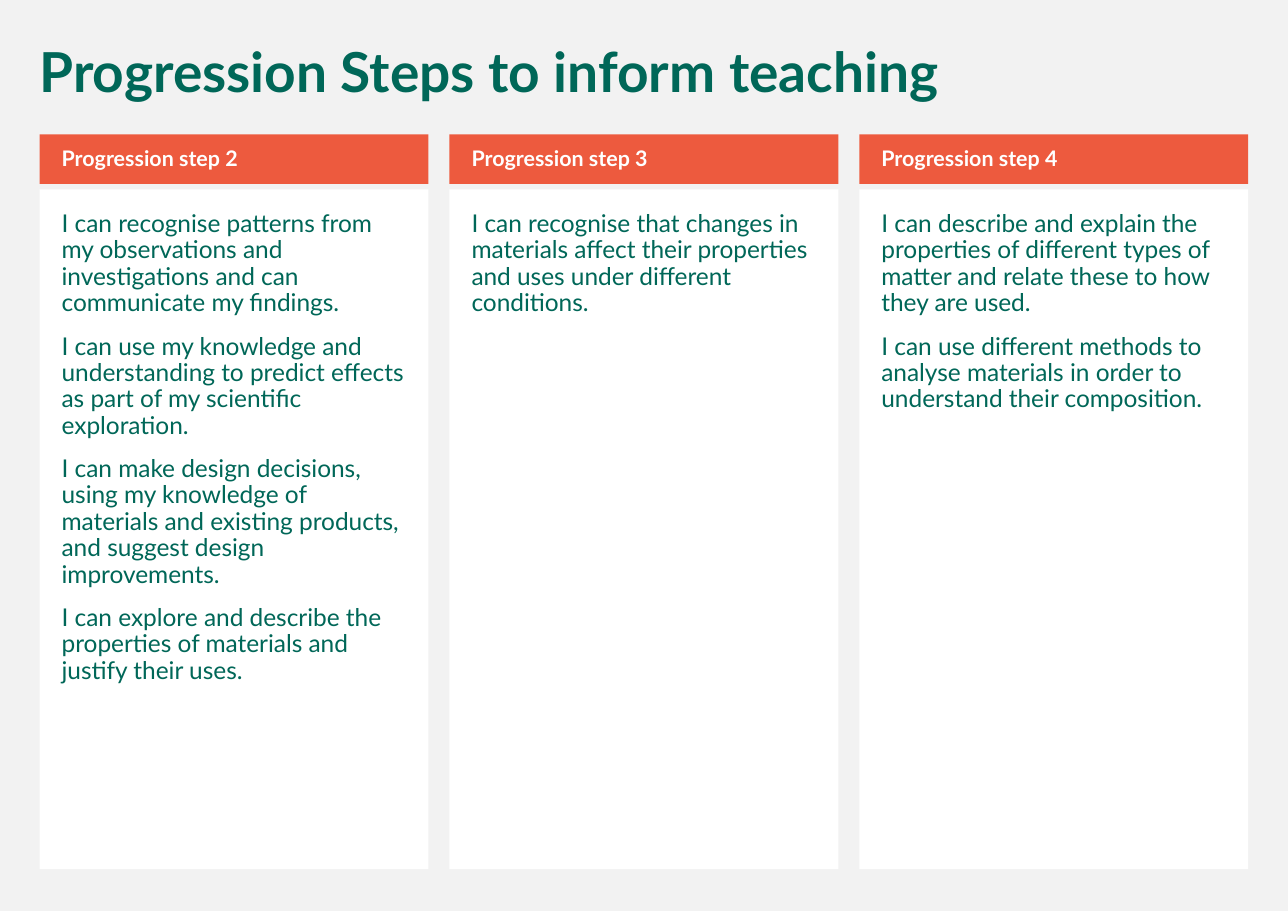
from pptx import Presentation
from pptx.dml.color import RGBColor
from pptx.enum.shapes import MSO_SHAPE
from pptx.enum.text import MSO_ANCHOR, PP_ALIGN
from pptx.util import Inches, Pt

GREEN = RGBColor(0x00, 0x67, 0x58)
ORANGE = RGBColor(0xED, 0x5A, 0x3E)
WHITE = RGBColor(0xFF, 0xFF, 0xFF)
PALE_GREY = RGBColor(0xF2, 0xF2, 0xF2)

FONT = "Lato"
SLIDE_WIDTH, SLIDE_HEIGHT = 11.69, 8.27
MARGIN = 0.36
COLUMN_WIDTH = 3.53
HEADING_TOP, HEADING_HEIGHT = 1.22, 0.45
STATEMENTS_TOP, STATEMENTS_HEIGHT = 1.72, 6.17

TITLE = "Progression Steps to inform teaching"
STEPS = {
    "Progression step 2": [
        "I can recognise patterns from my observations and investigations "
        "and can communicate my findings.",
        "I can use my knowledge and understanding to predict effects "
        "as part of my scientific exploration.",
        "I can make design decisions, using my knowledge of materials "
        "and existing products, and suggest design improvements.",
        "I can explore and describe the properties of materials "
        "and justify their uses.",
    ],
    "Progression step 3": [
        "I can recognise that changes in materials affect their properties "
        "and uses under different conditions.",
    ],
    "Progression step 4": [
        "I can describe and explain the properties of different types "
        "of matter and relate these to how they are used.",
        "I can use different methods to analyse materials in order to "
        "understand their composition.",
    ],
}


def write_text(shape, paragraphs, size, color=GREEN, bold=False,
               anchor=MSO_ANCHOR.TOP, insets=(0.1, 0.05, 0.1, 0.05)):
    """Fill a shape with paragraphs; insets are left, top, right, bottom."""
    frame = shape.text_frame
    frame.word_wrap = True
    frame.vertical_anchor = anchor
    (frame.margin_left, frame.margin_top,
     frame.margin_right, frame.margin_bottom) = map(Inches, insets)
    frame.text = "\n".join(paragraphs)
    for paragraph in frame.paragraphs:
        paragraph.alignment = PP_ALIGN.LEFT
        paragraph.line_spacing = 0.9
        paragraph.space_before = Pt(11)
        font = paragraph.runs[0].font
        font.name = FONT
        font.size = Pt(size)
        font.bold = bold
        font.color.rgb = color


def add_panel(slide, left, top, height, fill):
    panel = slide.shapes.add_shape(
        MSO_SHAPE.RECTANGLE, Inches(left), Inches(top),
        Inches(COLUMN_WIDTH), Inches(height))
    panel.shadow.inherit = False
    panel.fill.solid()
    panel.fill.fore_color.rgb = fill
    panel.line.fill.background()
    return panel


def add_step(slide, left, heading, statements):
    body = add_panel(slide, left, STATEMENTS_TOP, STATEMENTS_HEIGHT, WHITE)
    write_text(body, statements, size=16, insets=(0.2, 0.2, 0.2, 0.2))
    header = add_panel(slide, left, HEADING_TOP, HEADING_HEIGHT, ORANGE)
    write_text(header, [heading], size=14, color=WHITE, bold=True,
               anchor=MSO_ANCHOR.MIDDLE, insets=(0.2, 0.05, 0.1, 0.05))


def add_title(slide):
    title = slide.shapes.add_textbox(
        Inches(MARGIN - 0.1), Inches(MARGIN), Inches(11.08), Inches(0.65))
    write_text(title, [TITLE], size=36, bold=True)


def main():
    presentation = Presentation()
    presentation.slide_width = Inches(SLIDE_WIDTH)
    presentation.slide_height = Inches(SLIDE_HEIGHT)
    slide = presentation.slides.add_slide(presentation.slide_layouts[6])
    slide.background.fill.solid()
    slide.background.fill.fore_color.rgb = PALE_GREY

    pitch = (SLIDE_WIDTH - 2 * MARGIN - COLUMN_WIDTH) / (len(STEPS) - 1)
    for column, (heading, statements) in enumerate(STEPS.items()):
        add_step(slide, MARGIN + column * pitch, heading, statements)
    add_title(slide)
    presentation.save("out.pptx")


if __name__ == "__main__":
    main()
